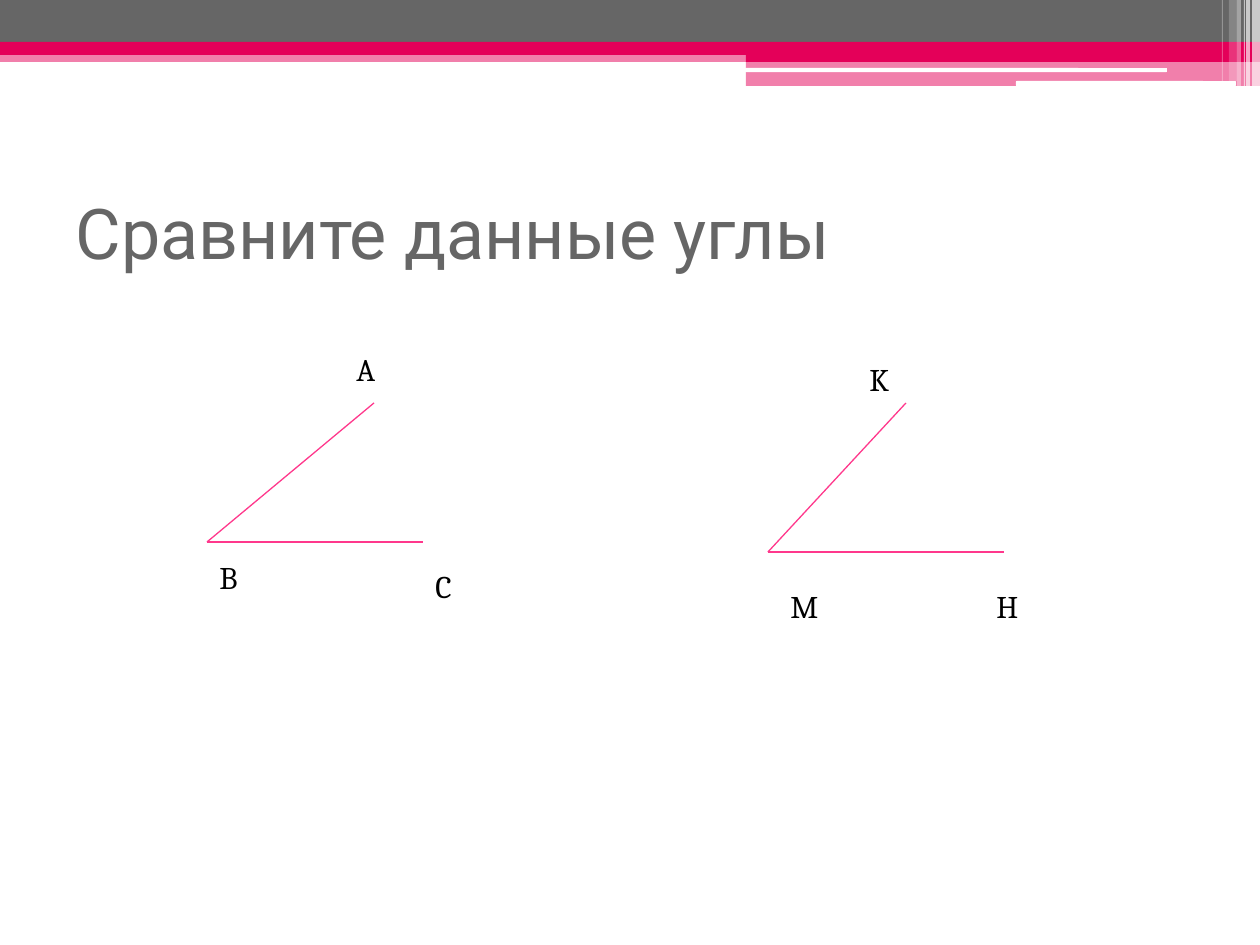
from lxml import etree
from pptx import Presentation
from pptx.dml.color import RGBColor
from pptx.enum.shapes import MSO_CONNECTOR, MSO_SHAPE
from pptx.enum.text import MSO_ANCHOR, MSO_AUTO_SIZE, PP_ALIGN
from pptx.oxml.ns import qn
from pptx.util import Emu, Pt

RECT, ROUNDED = MSO_SHAPE.RECTANGLE, MSO_SHAPE.ROUNDED_RECTANGLE
STRAIGHT = MSO_CONNECTOR.STRAIGHT
LEFT, MIDDLE, TOP = PP_ALIGN.LEFT, MSO_ANCHOR.MIDDLE, MSO_ANCHOR.TOP
NO_FIT, GROW = MSO_AUTO_SIZE.NONE, MSO_AUTO_SIZE.SHAPE_TO_FIT_TEXT
TITLE_ONLY = 5
PX_PER_INCH = 126

COLORS = {
    "gray": "666666",
    "crimson": "E40059",
    "white": "FFFFFF",
    "pink": "FF388C",
    "black": "000000",
}

# left, top, width, height, color, opacity in percent
HEADER_BANDS = [
    (0, 50, 1260, 12, "crimson", 50),
    (0, 0, 1260, 43, "gray", 100),
    (0, 42, 1260, 13, "crimson", 100),
    (746, 49, 514, 13, "crimson", 100),
    (746, 62, 514, 24, "crimson", 50),
]
HEADER_GAPS = [(745, 68, 422, 4), (1016, 81, 220, 5)]
# left, width, height, opacity in percent
EDGE_STRIPES = [
    (1252, 8, 86, 65),
    (1246, 4, 86, 65),
    (1244, 1, 86, 60),
    (1237, 4, 86, 40),
    (1229, 8, 81, 20),
    (1222, 1, 81, 30),
]

# vertex, ends of the two sides, labels as (letter, left, top, width, wrap)
ANGLES = [
    ((207, 542), [(423, 542), (374, 403)],
     [("A", 344, 344, 69, True), ("B", 207, 552, 43, False), ("C", 423, 561, 43, False)]),
    ((768, 552), [(1004, 552), (906, 403)],
     [("K", 857, 354, 45, True), ("M", 778, 581, 53, False), ("H", 984, 581, 45, False)]),
]
LABEL_HEIGHT = 50


def px(*lengths):
    return [Emu(round(length * 914400 / PX_PER_INCH)) for length in lengths]


def rgb(name):
    return RGBColor.from_string(COLORS[name])


def add_block(slide, box, color, opacity=100, kind=RECT):
    block = slide.shapes.add_shape(kind, *px(*box))
    block.shadow.inherit = False
    block.line.fill.background()
    block.fill.solid()
    block.fill.fore_color.rgb = rgb(color)
    if opacity < 100:
        tint = block.fill._xPr.find(".//" + qn("a:srgbClr"))
        etree.SubElement(tint, qn("a:alpha"), val=str(opacity * 1000))


def add_header(slide):
    for *box, color, opacity in HEADER_BANDS:
        add_block(slide, box, color, opacity)
    for box in HEADER_GAPS:
        add_block(slide, box, "white", kind=ROUNDED)
    for left, width, height, opacity in EDGE_STRIPES:
        add_block(slide, (left, 0, width, height), "white", opacity)


def write_text(holder, text, *, font, size, color, anchor=TOP, wrap=True, fit=GROW):
    frame = holder.text_frame
    frame.text = text
    frame.auto_size = fit
    frame.word_wrap = wrap
    frame.vertical_anchor = anchor
    paragraph = frame.paragraphs[0]
    paragraph.alignment = LEFT
    paragraph.font.name = font
    paragraph.font.size = Pt(size)
    paragraph.font.color.rgb = rgb(color)


def add_title(slide, text):
    title = slide.shapes.title
    title.left, title.top, title.width, title.height = px(63, 158, 1134, 147)
    write_text(title, text, font="Roboto", size=40, color="gray",
               anchor=MIDDLE, fit=NO_FIT)


def add_side(slide, vertex, end):
    side = slide.shapes.add_connector(STRAIGHT, *px(*vertex, *end))
    side.line.color.rgb = rgb("pink")
    side.line.width = Pt(0.75)
    etree.SubElement(side._element.spPr, qn("a:effectLst"))


def add_label(slide, letter, left, top, width, wrap):
    label = slide.shapes.add_textbox(*px(left, top, width, LABEL_HEIGHT))
    write_text(label, letter, font="Cambria", size=18, color="black", wrap=wrap)


def main():
    deck = Presentation()
    deck.slide_width, deck.slide_height = px(1260, 945)
    slide = deck.slides.add_slide(deck.slide_layouts[TITLE_ONLY])
    add_header(slide)
    add_title(slide, "Сравните данные углы")
    for vertex, ends, labels in ANGLES:
        for end in ends:
            add_side(slide, vertex, end)
        for label in labels:
            add_label(slide, *label)
    deck.save("out.pptx")


if __name__ == "__main__":
    main()
